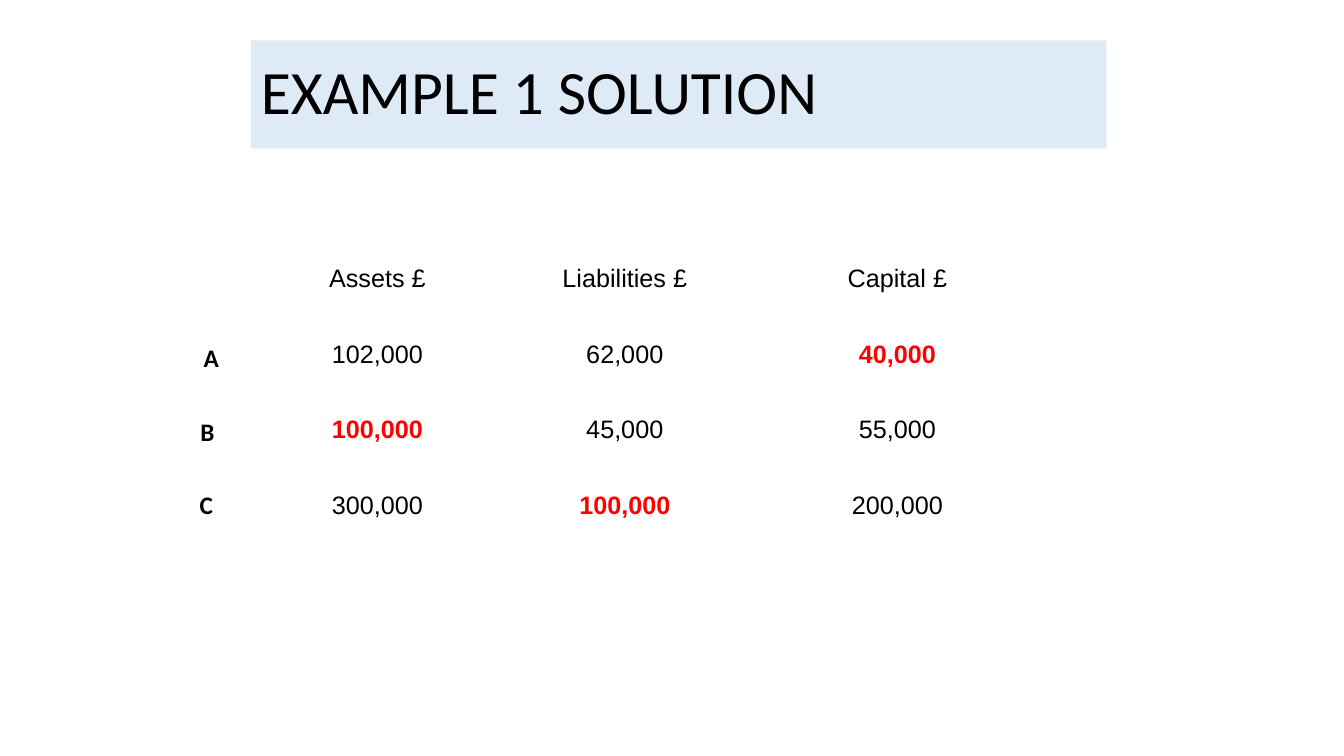
from pptx import Presentation
from pptx.dml.color import RGBColor
from pptx.enum.text import MSO_ANCHOR, MSO_AUTO_SIZE, PP_ALIGN
from pptx.util import Cm, Pt

BLACK = RGBColor(0x00, 0x00, 0x00)
RED = RGBColor(0xFF, 0x00, 0x00)
PALE_BLUE = RGBColor(0xDE, 0xEB, 0xF7)

TITLE_ONLY = 5
COLUMN_WIDTHS = (5.92, 6.55, 7.19)
ROW_HEIGHT = 1.9
HEADINGS = ("Assets £", "Liabilities £", "Capital £")
COMPANIES = {
    "A": ("102,000", "62,000", "40,000"),
    "B": ("100,000", "45,000", "55,000"),
    "C": ("300,000", "100,000", "200,000"),
}
SOLVED_CELLS = {(1, 2), (2, 0), (3, 1)}
LABEL_LEFTS = (4.88, 4.8, 4.78)
LABEL_STEP = 1.85


def format_text(paragraph, font_name, size, color=BLACK, bold=False, align=PP_ALIGN.LEFT):
    paragraph.alignment = align
    for run in paragraph.runs:
        run.font.name = font_name
        run.font.size = Pt(size)
        run.font.bold = bold
        run.font.color.rgb = color


def add_title(slide, left, top, width, height):
    title = slide.shapes.title
    title.left, title.top = Cm(left), Cm(top)
    title.width, title.height = Cm(width), Cm(height)
    title.fill.solid()
    title.fill.fore_color.rgb = PALE_BLUE
    frame = title.text_frame
    frame.text = "EXAMPLE 1 SOLUTION"
    frame.word_wrap = True
    frame.auto_size = MSO_AUTO_SIZE.NONE
    frame.vertical_anchor = MSO_ANCHOR.MIDDLE
    frame.paragraphs[0].line_spacing = 0.9
    format_text(frame.paragraphs[0], "Calibri", 44)


def add_balance_table(slide, left, top):
    """Place the figures, with the worked-out answers in bold red."""
    rows = [HEADINGS, *COMPANIES.values()]
    table = slide.shapes.add_table(
        len(rows), len(HEADINGS), Cm(left), Cm(top),
        Cm(sum(COLUMN_WIDTHS)), Cm(ROW_HEIGHT * len(rows))).table
    table.first_row = table.horz_banding = False
    for column, width in zip(table.columns, COLUMN_WIDTHS):
        column.width = Cm(width)
    for row_index, values in enumerate(rows):
        for column_index, value in enumerate(values):
            solved = (row_index, column_index) in SOLVED_CELLS
            cell = table.cell(row_index, column_index)
            cell.fill.background()
            cell.text_frame.text = value
            format_text(cell.text_frame.paragraphs[0], "Arial", 18,
                        RED if solved else BLACK, solved, PP_ALIGN.CENTER)


def add_company_labels(slide, top):
    for index, (company, left) in enumerate(zip(COMPANIES, LABEL_LEFTS)):
        label = slide.shapes.add_textbox(
            Cm(left), Cm(top + index * LABEL_STEP), Cm(0.91), Cm(1.02))
        frame = label.text_frame
        frame.text = company
        frame.word_wrap = True
        frame.auto_size = MSO_AUTO_SIZE.SHAPE_TO_FIT_TEXT
        format_text(frame.paragraphs[0], "Calibri", 18, bold=True)


def main():
    presentation = Presentation()
    presentation.slide_width = Cm(33.87)
    presentation.slide_height = Cm(19.05)
    slide = presentation.slides.add_slide(presentation.slide_layouts[TITLE_ONLY])
    add_title(slide, 6.32, 1.02, 21.56, 2.72)
    add_balance_table(slide, 6.55, 6.55)
    add_company_labels(slide, 8.51)
    presentation.save("out.pptx")


if __name__ == "__main__":
    main()
